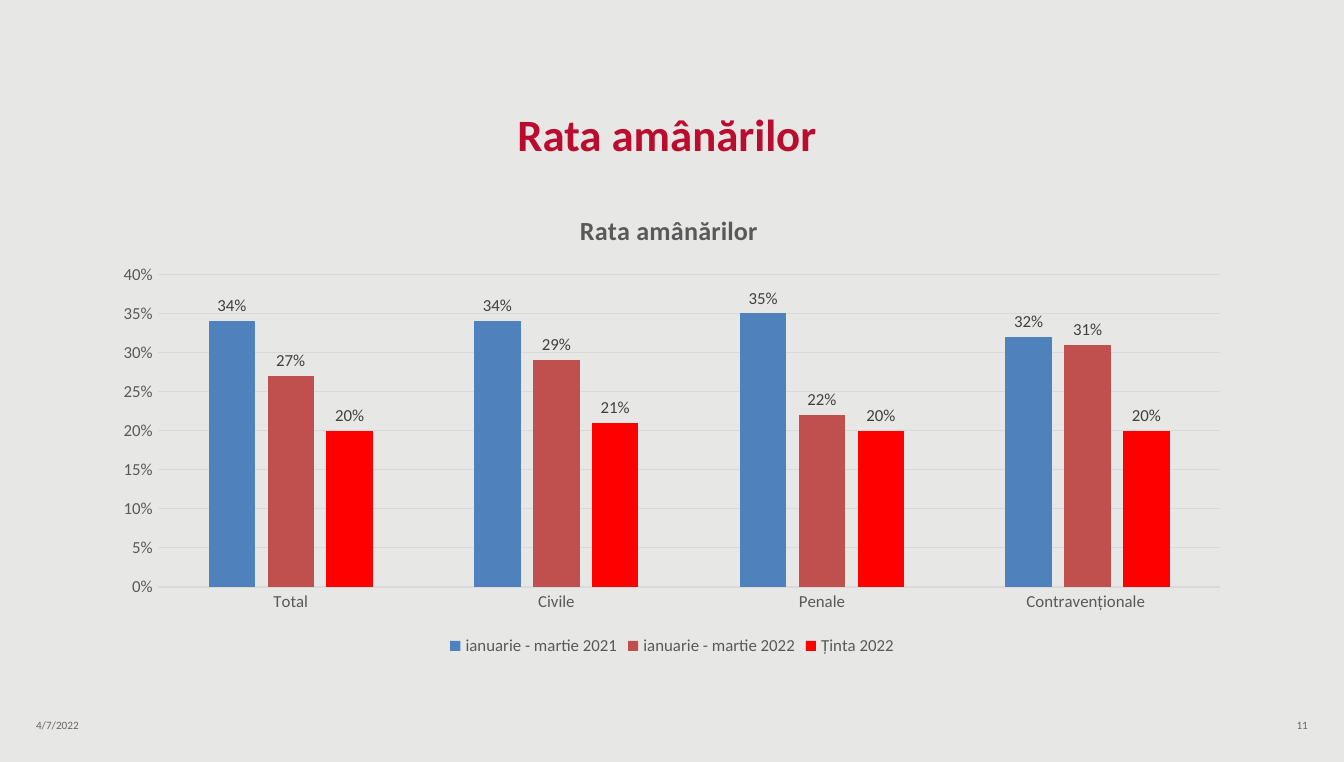
from typing import NamedTuple

from pptx import Presentation
from pptx.chart.data import CategoryChartData
from pptx.dml.color import RGBColor
from pptx.enum.chart import XL_CHART_TYPE, XL_LABEL_POSITION, XL_LEGEND_POSITION, XL_TICK_MARK
from pptx.enum.text import MSO_ANCHOR, PP_ALIGN
from pptx.util import Inches, Pt

FONT = "Calibri"
BACKGROUND = RGBColor(0xE7, 0xE7, 0xE5)
CRIMSON = RGBColor(0xBA, 0x0C, 0x2F)
FOOTER_GRAY = RGBColor(0x6C, 0x64, 0x63)
AXIS_GRAY = RGBColor(0x59, 0x59, 0x59)
LABEL_GRAY = RGBColor(0x40, 0x40, 0x40)
GRID_GRAY = RGBColor(0xD9, 0xD9, 0xD9)
BLUE = RGBColor(0x4F, 0x81, 0xBD)
BRICK = RGBColor(0xC0, 0x50, 0x4D)
RED = RGBColor(0xFF, 0x00, 0x00)


class Box(NamedTuple):
    left: float
    top: float
    width: float
    height: float

    def lengths(self):
        return [Inches(v) for v in self]


class RateSeries(NamedTuple):
    name: str
    values: tuple[float, ...]
    color: RGBColor


CATEGORIES = ("Total", "Civile", "Penale", "Contravenționale ")
SERIES = (
    RateSeries("ianuarie - martie 2021", (0.34, 0.34, 0.35, 0.32), BLUE),
    RateSeries("ianuarie - martie 2022", (0.27, 0.29, 0.22, 0.31), BRICK),
    RateSeries("Ținta 2022", (0.20, 0.21, 0.20, 0.20), RED),
)


def set_font(font, size: float, color: RGBColor, bold: bool = False) -> None:
    font.name = FONT
    font.size = Pt(size)
    font.bold = bold
    font.color.rgb = color


def add_text(s, text: str, box: Box, *, size: float, color: RGBColor, bold: bool = False,
             align=PP_ALIGN.LEFT, anchor=MSO_ANCHOR.MIDDLE) -> None:
    tf = s.shapes.add_textbox(*box.lengths()).text_frame
    tf.word_wrap = True
    tf.vertical_anchor = anchor
    p = tf.paragraphs[0]
    p.alignment = align
    p.line_spacing = 0.9
    p.space_after = Pt(6)
    r = p.add_run()
    r.text = text
    set_font(r.font, size, color, bold)


def set_line(line) -> None:
    line.color.rgb = GRID_GRAY
    line.width = Pt(0.75)


def format_axes(chart) -> None:
    for axis in (chart.category_axis, chart.value_axis):
        axis.major_tick_mark = axis.minor_tick_mark = XL_TICK_MARK.NONE
        set_font(axis.tick_labels.font, 9, AXIS_GRAY)
    set_line(chart.category_axis.format.line)
    values = chart.value_axis
    values.format.line.fill.background()
    values.minimum_scale, values.maximum_scale, values.major_unit = 0, 0.4, 0.05
    values.tick_labels.number_format = "0%"
    values.tick_labels.number_format_is_linked = False
    values.has_major_gridlines = True
    set_line(values.major_gridlines.format.line)


def format_series(series, color: RGBColor) -> None:
    series.format.fill.solid()
    series.format.fill.fore_color.rgb = color
    series.invert_if_negative = False
    labels = series.data_labels
    labels.show_value = True
    labels.number_format = "0%"
    labels.number_format_is_linked = False
    labels.position = XL_LABEL_POSITION.OUTSIDE_END
    set_font(labels.font, 9, LABEL_GRAY)


def add_rate_chart(s, title: str, box: Box) -> None:
    data = CategoryChartData(number_format="0%")
    data.categories = CATEGORIES
    for rate in SERIES:
        data.add_series(rate.name, rate.values)
    chart = s.shapes.add_chart(XL_CHART_TYPE.COLUMN_CLUSTERED, *box.lengths(), data).chart
    set_font(chart.font, 10, RGBColor(0, 0, 0))

    chart.has_title = True
    chart.chart_title.include_in_layout = False
    r = chart.chart_title.text_frame.paragraphs[0].add_run()
    r.text = title
    set_font(r.font, 14, AXIS_GRAY, True)

    chart.has_legend = True
    chart.legend.position = XL_LEGEND_POSITION.BOTTOM
    chart.legend.include_in_layout = False
    set_font(chart.legend.font, 9, AXIS_GRAY)

    format_axes(chart)
    plot = chart.plots[0]
    plot.vary_by_categories = False
    plot.gap_width = 219
    plot.overlap = -27
    for series, rate in zip(plot.series, SERIES):
        format_series(series, rate.color)


def main() -> None:
    prs = Presentation()
    prs.slide_width, prs.slide_height = Inches(10), Inches(5.67)
    s = prs.slides.add_slide(prs.slide_layouts[6])
    s.background.fill.solid()
    s.background.fill.fore_color.rgb = BACKGROUND

    add_text(s, "4/7/2022", Box(0.17, 5.3, 2.33, 0.2), size=6, color=FOOTER_GRAY)
    add_text(s, "11", Box(7.5, 5.3, 2.33, 0.2), size=6, color=FOOTER_GRAY, align=PP_ALIGN.RIGHT)
    add_text(s, "Rata amânărilor ", Box(0.75, 0.74, 8.5, 0.51), size=24, color=CRIMSON,
             bold=True, align=PP_ALIGN.CENTER, anchor=MSO_ANCHOR.BOTTOM)
    add_rate_chart(s, "Rata amânărilor ", Box(0.75, 1.42, 8.5, 3.5))
    prs.save("out.pptx")


if __name__ == "__main__":
    main()
